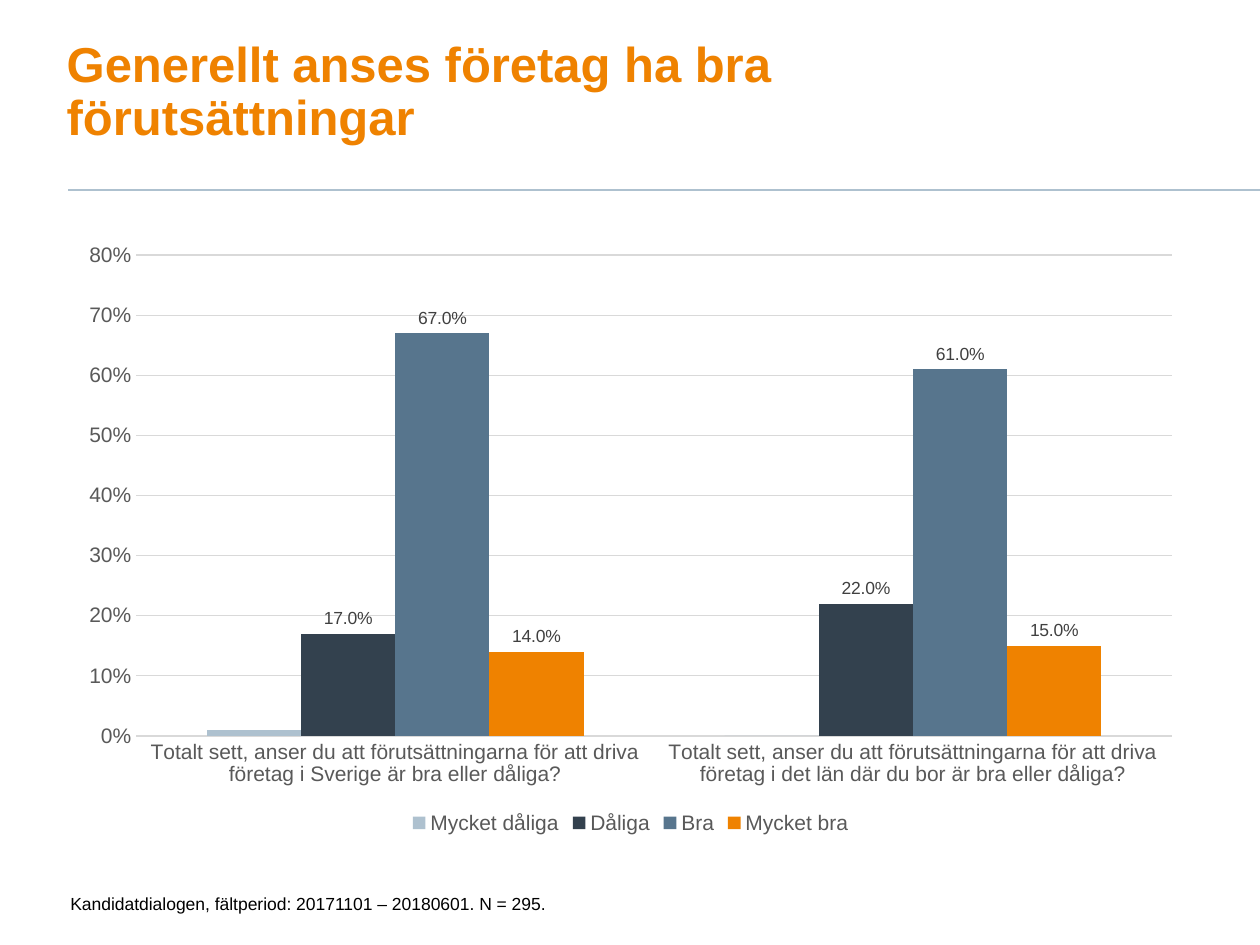
import pptx
import pptx.chart.data
import pptx.dml.color
import pptx.enum.chart
import pptx.enum.shapes
import pptx.enum.text
import pptx.oxml.ns
import pptx.util
from pptx.dml.color import RGBColor
from pptx.util import Inches, Pt

FONT = "Arial"
ORANGE = RGBColor(0xEF, 0x82, 0x00)
LIGHT_BLUE = RGBColor(0xAE, 0xC1, 0xCF)
NAVY = RGBColor(0x33, 0x41, 0x4E)
STEEL_BLUE = RGBColor(0x57, 0x75, 0x8D)
AXIS_GRAY = RGBColor(0x59, 0x59, 0x59)
LABEL_GRAY = RGBColor(0x40, 0x40, 0x40)
GRID_GRAY = RGBColor(0xD9, 0xD9, 0xD9)
BLACK = RGBColor(0, 0, 0)


def style_font(font, size, color, bold=False):
    font.name = FONT
    font.size = Pt(size)
    font.bold = bold
    font.color.rgb = color


presentation = pptx.Presentation()
presentation.slide_width = Inches(10)
presentation.slide_height = Inches(7.5)
slide = presentation.slides.add_slide(presentation.slide_layouts[6])

# Divider under the title
divider = slide.shapes.add_connector(
    pptx.enum.shapes.MSO_CONNECTOR.STRAIGHT,
    Inches(0.54), Inches(1.51), Inches(10), Inches(1.51))
divider.line.color.rgb = LIGHT_BLUE
divider.line.width = Pt(1)
divider_properties = divider._element.spPr
divider_properties.append(
    divider_properties.makeelement(pptx.oxml.ns.qn("a:effectLst"), {}))

# Title
title = slide.shapes.add_textbox(
    Inches(0.53), Inches(0.31), Inches(7.16), Inches(0.9))
title_frame = title.text_frame
title_frame.word_wrap = True
title_frame.vertical_anchor = pptx.enum.text.MSO_ANCHOR.BOTTOM
title_frame.margin_left = title_frame.margin_top = 0
title_frame.text = "Generellt anses företag ha bra förutsättningar"
title_paragraph = title_frame.paragraphs[0]
title_paragraph.line_spacing = 0.9
style_font(title_paragraph.runs[0].font, 28, ORANGE, bold=True)

# Chart
answers = [
    ("Mycket dåliga", (0.01, 0), LIGHT_BLUE),
    ("Dåliga", (0.17, 0.22), NAVY),
    ("Bra", (0.67, 0.61), STEEL_BLUE),
    ("Mycket bra", (0.14, 0.15), ORANGE),
]
question = "Totalt sett, anser du att förutsättningarna för att driva företag i {} är bra eller dåliga?"
chart_data = pptx.chart.data.CategoryChartData(number_format="0%")
chart_data.categories = [
    question.format(area) for area in ("Sverige", "det län där du bor")]
for name, shares, color in answers:
    chart_data.add_series(name, shares)

chart = slide.shapes.add_chart(
    pptx.enum.chart.XL_CHART_TYPE.COLUMN_CLUSTERED,
    Inches(0.53), Inches(1.84), Inches(8.95), Inches(4.82), chart_data).chart
style_font(chart.font, 10, BLACK)
chart.has_title = False
chart.has_legend = True
chart.legend.position = pptx.enum.chart.XL_LEGEND_POSITION.BOTTOM
chart.legend.include_in_layout = False
style_font(chart.legend.font, 12, AXIS_GRAY)

for axis in (chart.category_axis, chart.value_axis):
    axis.major_tick_mark = pptx.enum.chart.XL_TICK_MARK.NONE
    axis.minor_tick_mark = pptx.enum.chart.XL_TICK_MARK.NONE
    style_font(axis.tick_labels.font, 12, AXIS_GRAY)

value_axis = chart.value_axis
value_axis.minimum_scale = 0
value_axis.maximum_scale = 0.8
value_axis.major_unit = 0.1
value_axis.tick_labels.number_format = "0%"
value_axis.tick_labels.number_format_is_linked = False
value_axis.format.line.fill.background()
value_axis.has_major_gridlines = True
for line in (chart.category_axis.format.line,
             value_axis.major_gridlines.format.line):
    line.color.rgb = GRID_GRAY
    line.width = Pt(0.75)

plot = chart.plots[0]
plot.gap_width = 150
plot.overlap = 0
plot.vary_by_categories = False
for series, (name, shares, color) in zip(plot.series, answers):
    series.format.fill.solid()
    series.format.fill.fore_color.rgb = color
    series.invert_if_negative = False
    if name != "Mycket dåliga":
        labels = series.data_labels
        labels.show_value = True
        labels.number_format = "0.0%"
        labels.number_format_is_linked = False
        labels.position = pptx.enum.chart.XL_LABEL_POSITION.OUTSIDE_END
        style_font(labels.font, 10, LABEL_GRAY)

# Source note
note = slide.shapes.add_textbox(
    Inches(0.46), Inches(7.04), Inches(7.98), Inches(0.27))
note.text_frame.word_wrap = True
note.text_frame.auto_size = pptx.enum.text.MSO_AUTO_SIZE.SHAPE_TO_FIT_TEXT
note.text_frame.text = "Kandidatdialogen, fältperiod: 20171101 – 20180601. N = 295."
style_font(note.text_frame.paragraphs[0].runs[0].font, 10, BLACK)

presentation.save("out.pptx")
